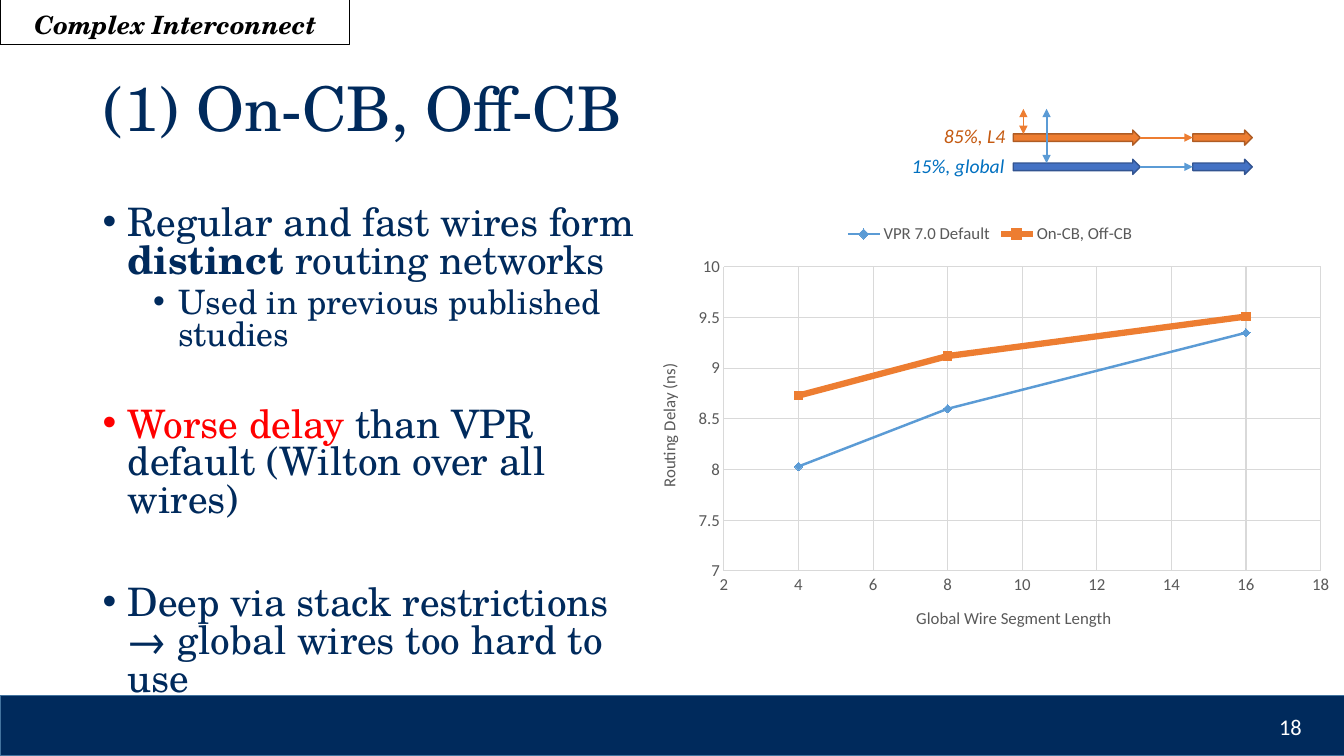
from dataclasses import dataclass

import pptx
import pptx.chart.data
import pptx.dml.color
import pptx.enum.chart
import pptx.enum.shapes
import pptx.enum.text
import pptx.oxml
import pptx.util
from lxml import etree
from pptx.util import Inches, Pt

RGB = pptx.dml.color.RGBColor.from_string
ALIGN = pptx.enum.text.PP_ALIGN
ANCHOR = pptx.enum.text.MSO_ANCHOR
SHAPE = pptx.enum.shapes.MSO_SHAPE
NS = 'xmlns:a="http://schemas.openxmlformats.org/drawingml/2006/main"'
NS_C = 'xmlns:c="http://schemas.openxmlformats.org/drawingml/2006/chart"'


@dataclass(frozen=True)
class Theme:
    serif: str = "TeX Gyre Schola"
    sans: str = "Calibri"
    navy: str = "002A5C"
    red: str = "FF0000"
    black: str = "000000"
    white: str = "FFFFFF"
    grey: str = "595959"
    grid: str = "D9D9D9"
    orange: str = "ED7D31"
    orange_edge: str = "AF5C24"
    orange_text: str = "C55A11"
    blue: str = "4472C4"
    blue_edge: str = "325491"
    blue_text: str = "0070C0"
    sky: str = "5B9BD5"
    footer_edge: str = "43739E"
    title: int = 44
    body: int = 28
    sub: int = 24
    tag: int = 18
    number: int = 16
    label: int = 14
    chart: int = 12


T = Theme()


def add_run(p, text, font, size, color, bold=False, italic=False):
    r = p.add_run()
    r.text = text
    r.font.name, r.font.size = font, Pt(size)
    r.font.bold, r.font.italic = bold, italic
    r.font.color.rgb = RGB(color)


def add_box(s, shape, left, top, width, height, fill, edge):
    sp = s.shapes.add_shape(shape, Inches(left), Inches(top), Inches(width), Inches(height))
    sp.shadow.inherit = False
    if fill:
        sp.fill.solid()
        sp.fill.fore_color.rgb = RGB(fill)
    else:
        sp.fill.background()
    sp.line.color.rgb = RGB(edge)
    sp.line.width = Pt(1)
    return sp


prs = pptx.Presentation()
prs.slide_width, prs.slide_height = Inches(13.33), Inches(7.5)
s = prs.slides.add_slide(prs.slide_layouts[5])

# Footer bar and slide number
add_box(s, SHAPE.RECTANGLE, 0, 6.9, 13.35, 0.6, T.navy, T.footer_edge)
tf = s.shapes.add_textbox(Inches(10.01), Inches(7.01), Inches(3), Inches(0.4)).text_frame
tf.word_wrap = True
tf.vertical_anchor = ANCHOR.MIDDLE
tf.paragraphs[0].alignment = ALIGN.RIGHT
add_run(tf.paragraphs[0], "18", T.sans, T.number, T.white)

# Title
title = s.shapes.title
title.left, title.top, title.width, title.height = map(Inches, (0.93, 0.38, 11.5, 1.45))
tf = title.text_frame
tf.auto_size = pptx.enum.text.MSO_AUTO_SIZE.NONE
tf.vertical_anchor = ANCHOR.MIDDLE
p = tf.paragraphs[0]
p.alignment, p.line_spacing = ALIGN.LEFT, 0.9
add_run(p, "(1) On-CB, Off-CB", T.serif, T.title, T.navy)

# Section tag
tag = add_box(s, SHAPE.RECTANGLE, 0, -0.01, 3.47, 0.45, None, T.black)
tf = tag.text_frame
tf.word_wrap = False
tf.vertical_anchor = ANCHOR.MIDDLE
tf.margin_left, tf.margin_top = Inches(0.34), Inches(0.1)
tf.paragraphs[0].alignment = ALIGN.LEFT
add_run(tf.paragraphs[0], "Complex Interconnect", T.serif, T.tag, T.black, True, True)

# Bullets: level, space before, runs of (text, colour, bold)
bullets = [
    (0, 0, [("Regular and fast wires form ", T.navy, False), ("distinct ", T.navy, True),
            ("routing networks", T.navy, False)]),
    (1, 5, [("Used in previous published studies", T.navy, False)]),
    (0, 39, [("Worse delay ", T.red, False),
             ("than VPR default (Wilton over all wires)", T.navy, False)]),
    (0, 47, [("Deep via stack restrictions → global wires too hard to use", T.navy, False)]),
]
tf = s.shapes.add_textbox(Inches(0.92), Inches(2), Inches(5.52), Inches(4.76)).text_frame
tf.word_wrap = True
for i, (level, space, runs) in enumerate(bullets):
    p = tf.add_paragraph() if i else tf.paragraphs[0]
    p.level, p.line_spacing, p.space_before = level, 0.8, Pt(space)
    pPr = p._p.get_or_add_pPr()
    pPr.set("marL", str(Inches(0.25 + 0.5 * level)))
    pPr.set("indent", str(Inches(-0.25)))
    pPr.append(pptx.oxml.parse_xml(f'<a:buFont {NS} typeface="Arial"/>'))
    pPr.append(pptx.oxml.parse_xml(f'<a:buChar {NS} char="•"/>'))
    for text, color, bold in runs:
        add_run(p, text, T.serif, T.sub if level else T.body, color, bold)

# Routing delay chart
delays = [
    ("VPR 7.0 Default", (8.03, 8.6, 9.35), T.sky, 1.75, "DIAMOND"),
    ("On-CB, Off-CB", (8.73, 9.12, 9.51), T.orange, 4.5, "SQUARE"),
]
data = pptx.chart.data.XyChartData()
for name, values, *_ in delays:
    series = data.add_series(name)
    for length, delay in zip((4, 8, 16), values):
        series.add_data_point(length, delay)
chart = s.shapes.add_chart(pptx.enum.chart.XL_CHART_TYPE.XY_SCATTER_LINES, Inches(6.31),
                           Inches(2.11), Inches(7.02), Inches(4.34), data).chart
chart.font.name, chart.font.size = T.sans, Pt(T.chart)
chart.font.color.rgb = RGB(T.grey)
chart.has_title = False
chart.has_legend = True
chart.legend.position = pptx.enum.chart.XL_LEGEND_POSITION.TOP
chart.legend.include_in_layout = False
plot = chart.plots[0]
plot.vary_by_categories = False
for series, (_, _, color, width, marker) in zip(plot.series, delays):
    series.smooth = False
    series.format.line.color.rgb = RGB(color)
    series.format.line.width = Pt(width)
    series.marker.style = pptx.enum.chart.XL_MARKER_STYLE[marker]
    series.marker.size = 6
    series.marker.format.fill.solid()
    series.marker.format.fill.fore_color.rgb = RGB(color)
    series.marker.format.line.color.rgb = RGB(color)
axes = [
    (chart.category_axis, "Global Wire Segment Length", 2, 18, 2),
    (chart.value_axis, "Routing Delay (ns)", 7, 10, 0.5),
]
for axis, text, low, high, step in axes:
    axis.minimum_scale, axis.maximum_scale, axis.major_unit = low, high, step
    axis.major_tick_mark = axis.minor_tick_mark = pptx.enum.chart.XL_TICK_MARK.NONE
    axis.has_major_gridlines = True
    for line in (axis.format.line, axis.major_gridlines.format.line):
        line.color.rgb = RGB(T.grid)
        line.width = Pt(0.75)
    add_run(axis.axis_title.text_frame.paragraphs[0], text, T.sans, T.chart, T.grey)
area = chart._chartSpace.chart.plotArea
for old in area.findall("{*}layout"):
    area.remove(old)
frame = "".join(f'<c:{k} val="{v}"/>' for k, v in [
    ("layoutTarget", "inner"), ("xMode", "edge"), ("yMode", "edge"),
    ("x", 0.124), ("y", 0.124), ("w", 0.843), ("h", 0.695)])
area.insert(0, pptx.oxml.parse_xml(
    f"<c:layout {NS_C}><c:manualLayout>{frame}</c:manualLayout></c:layout>"))

# Wire tracks: label, its left, top and colour, arrow top, fill and edge, then the via's x, end and width
tracks = [
    ("85%, L4", 8.55, 1.18, T.orange_text, 1.29, T.orange, T.orange_edge, T.orange, 10.15, 1.33, 1),
    ("15%, global", 8.54, 1.48, T.blue_text, 1.58, T.blue, T.blue_edge, T.sky, 10.38, 1.62, 1.5),
]
for text, left, top, text_color, y, fill, edge, link, via, via_end, via_width in tracks:
    tf = s.shapes.add_textbox(Inches(left), Inches(top), Inches(1.52), Inches(0.34)).text_frame
    tf.word_wrap = True
    tf.paragraphs[0].alignment = ALIGN.RIGHT
    add_run(tf.paragraphs[0], text, T.sans, T.label, text_color, italic=True)
    for x, width in ((10.05, 1.26), (11.83, 0.59)):
        add_box(s, SHAPE.RIGHT_ARROW, x, y, width, 0.15, fill, edge)
    mid = y + 0.075
    links = [((via, 1.08, via, via_end), via_width, ("headEnd", "tailEnd")),
             ((11.31, mid, 11.83, mid), 1.5, ("tailEnd",))]
    for ends, width, heads in links:
        cx = s.shapes.add_connector(pptx.enum.shapes.MSO_CONNECTOR.STRAIGHT, *map(Inches, ends))
        cx.line.color.rgb = RGB(link)
        cx.line.width = Pt(width)
        ln = cx.line._get_or_add_ln()
        for head in heads:
            ln.append(pptx.oxml.parse_xml(f'<a:{head} {NS} type="triangle"/>'))
        etree.SubElement(cx._element.spPr, pptx.oxml.ns.qn("a:effectLst"))

prs.save("out.pptx")
